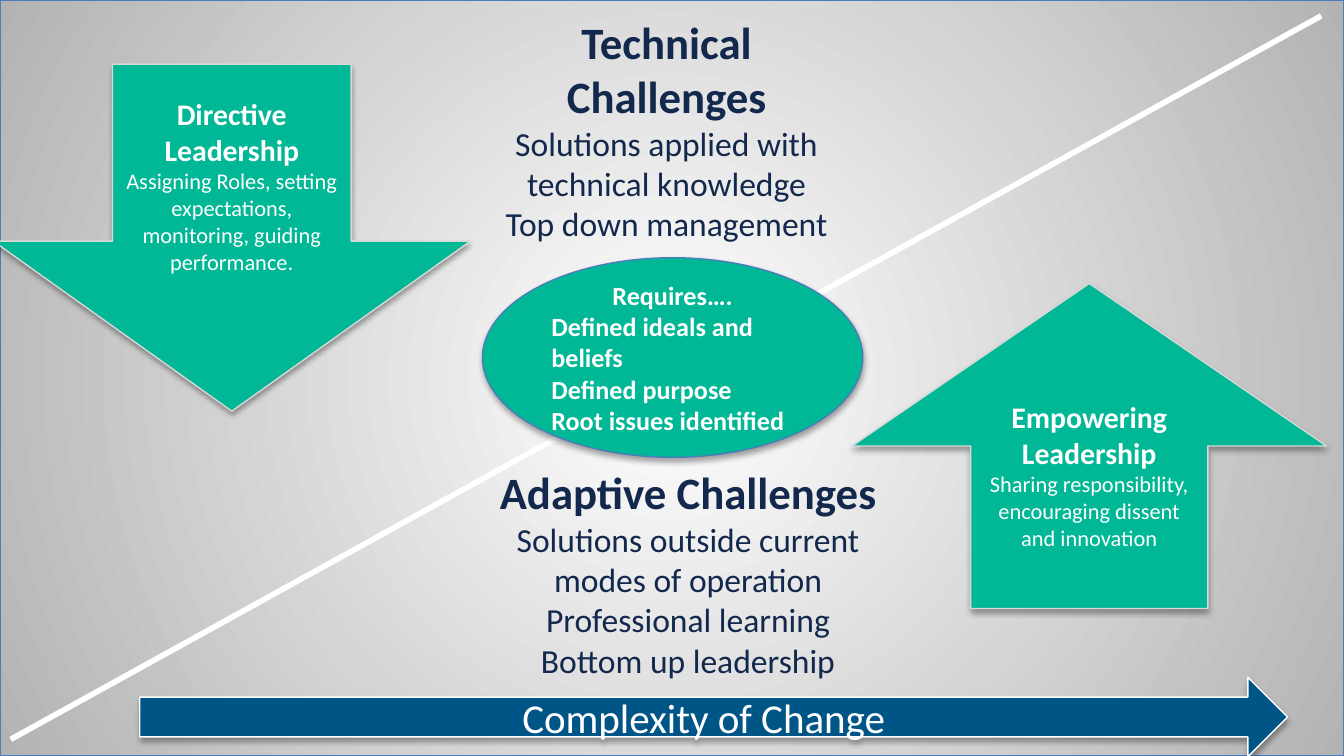
from dataclasses import dataclass

from lxml.etree import SubElement
from pptx import Presentation
from pptx.dml.color import RGBColor
from pptx.enum.shapes import MSO_CONNECTOR, MSO_SHAPE
from pptx.enum.text import MSO_ANCHOR, MSO_AUTO_SIZE, PP_ALIGN
from pptx.oxml import parse_xml
from pptx.oxml.ns import nsdecls, qn
from pptx.util import Inches, Pt

WIDTH, HEIGHT = Inches(10), Inches(5.625)
FONT = "Calibri"
WHITE = RGBColor(0xFF, 0xFF, 0xFF)
NAVY = RGBColor(0x12, 0x28, 0x4C)
GREEN = RGBColor(0x00, 0xB7, 0x96)
BLUE = RGBColor(0x00, 0x55, 0x87)
EDGE_BLUE = RGBColor(0x4A, 0x7D, 0xBA)
EDGE_GRAY = RGBColor(0xD9, 0xD9, 0xD9)
GLOW_GRAY = RGBColor(0xB3, 0xB3, 0xB3)


@dataclass(frozen=True)
class Area:
    left: float
    top: float
    width: float
    height: float

    def lengths(self) -> tuple:
        return (across(self.left), down(self.top),
                across(self.width), down(self.height))


@dataclass(frozen=True)
class Line:
    text: str
    size: float
    bold: bool = False
    align: PP_ALIGN = PP_ALIGN.CENTER


@dataclass(frozen=True)
class Figure:
    kind: MSO_SHAPE
    area: Area
    fill: RGBColor
    edge: RGBColor
    lines: tuple = ()
    adjustments: tuple = ()
    bottom_inset: float = 0.05


@dataclass(frozen=True)
class Challenge:
    area: Area
    heading: str
    points: tuple


def across(share: float) -> int:
    return round(WIDTH * share / 100)


def down(share: float) -> int:
    return round(HEIGHT * share / 100)


def add_line(frame, text: str, *, first: bool, size: float, color: RGBColor,
             bold: bool = False, align: PP_ALIGN = PP_ALIGN.CENTER) -> None:
    para = frame.paragraphs[0] if first else frame.add_paragraph()
    properties = para._p.get_or_add_pPr()
    properties.set("marL", "0")
    properties.set("indent", "0")
    SubElement(properties, qn("a:buNone"))
    para.alignment = align
    para.space_before = Pt(0)
    span = para.add_run()
    span.text = text
    span.font.name = FONT
    span.font.size = Pt(size)
    span.font.bold = bold
    span.font.color.rgb = color


def write_lines(frame, lines: tuple, color: RGBColor) -> None:
    frame.word_wrap = True
    for index, line in enumerate(lines):
        add_line(frame, line.text, first=index == 0, size=line.size,
                 color=color, bold=line.bold, align=line.align)


def add_shadow(shape) -> None:
    shape.shadow.inherit = False
    effects = shape._element.spPr.find(qn("a:effectLst"))
    effects.append(parse_xml(
        f'<a:outerShdw {nsdecls("a")} blurRad="{Pt(3.1)}" dist="{Pt(1.8)}" '
        'dir="5400000" rotWithShape="0"><a:srgbClr val="000000">'
        '<a:alpha val="35000"/></a:srgbClr></a:outerShdw>'))


def add_figure(page, figure: Figure):
    shape = page.shapes.add_shape(figure.kind, *figure.area.lengths())
    for index, value in enumerate(figure.adjustments):
        shape.adjustments[index] = value
    shape.fill.solid()
    shape.fill.fore_color.rgb = figure.fill
    shape.line.color.rgb = figure.edge
    shape.line.width = Pt(0.75)
    add_shadow(shape)
    frame = shape.text_frame
    frame.vertical_anchor = MSO_ANCHOR.MIDDLE
    frame.margin_bottom = Inches(figure.bottom_inset)
    write_lines(frame, figure.lines, WHITE)
    return shape


def add_backdrop(page) -> None:
    backdrop = add_figure(page, Figure(
        MSO_SHAPE.RECTANGLE, Area(0, 0, 100, 100), WHITE, EDGE_BLUE))
    properties = backdrop._element.spPr
    properties.replace(properties.find(qn("a:solidFill")), parse_xml(
        f'<a:gradFill {nsdecls("a")} rotWithShape="1"><a:gsLst>'
        f'<a:gs pos="0"><a:srgbClr val="{WHITE}"/></a:gs>'
        f'<a:gs pos="100000"><a:srgbClr val="{GLOW_GRAY}"/></a:gs></a:gsLst>'
        '<a:path path="circle"><a:fillToRect l="50000" t="50000" r="50000" '
        'b="50000"/></a:path></a:gradFill>'))


def fill_challenge(placeholder, challenge: Challenge) -> None:
    (placeholder.left, placeholder.top,
     placeholder.width, placeholder.height) = challenge.area.lengths()
    frame = placeholder.text_frame
    frame.auto_size = MSO_AUTO_SIZE.NONE
    frame.vertical_anchor = MSO_ANCHOR.TOP
    points = tuple(Line(point, 18) for point in challenge.points)
    write_lines(frame, (Line(challenge.heading, 24, bold=True), *points), NAVY)
    placeholder._element.getparent().append(placeholder._element)


def add_diagonal(page) -> None:
    diagonal = page.shapes.add_connector(
        MSO_CONNECTOR.STRAIGHT, across(98.3), down(2.1), across(0.8), down(97.8))
    diagonal.line.color.rgb = WHITE
    diagonal.line.width = Pt(3)
    SubElement(diagonal._element.spPr, qn("a:effectLst"))


LEADERSHIP = (
    Figure(MSO_SHAPE.UP_ARROW, Area(63.4, 37.5, 35.3, 43), GREEN, EDGE_GRAY,
           (Line("Empowering Leadership", 16, bold=True),
            Line("Sharing responsibility, encouraging dissent and innovation", 12)),
           (0.5, 0.5), bottom_inset=0.23),
    Figure(MSO_SHAPE.DOWN_ARROW, Area(-0.5, 8.5, 35.5, 45.9), GREEN, EDGE_GRAY,
           (Line("Directive Leadership", 16, bold=True),
            Line("Assigning Roles, setting expectations, monitoring, "
                 "guiding performance.", 12)),
           (0.5, 0.49), bottom_inset=0.2),
)
CHALLENGES = (
    Challenge(Area(36.5, 1.1, 26.2, 32.4), "Technical Challenges",
              ("Solutions applied with technical knowledge",
               "Top down management")),
    Challenge(Area(35.7, 60.6, 31, 30.9), "Adaptive Challenges",
              ("Solutions outside current modes of operation",
               "Professional learning", "Bottom up leadership")),
)
COMPLEXITY = Figure(
    MSO_SHAPE.RIGHT_ARROW, Area(10.4, 89.6, 85.4, 10.5), BLUE, WHITE,
    (Line("Complexity of Change", 22),), (0.5, 0.5))
REQUIREMENTS = Figure(
    MSO_SHAPE.OVAL, Area(35.9, 34.1, 28.3, 26.4), GREEN, EDGE_BLUE,
    (Line("Requires….", 14, bold=True),
     *(Line(text, 14, bold=True, align=PP_ALIGN.LEFT) for text in (
         "Defined ideals and beliefs", "Defined purpose",
         "Root issues identified"))))


def main() -> None:
    deck = Presentation()
    deck.slide_width, deck.slide_height = WIDTH, HEIGHT
    page = deck.slides.add_slide(deck.slide_layouts.get_by_name("Two Content"))
    title, *bodies = page.placeholders
    title._element.getparent().remove(title._element)
    add_backdrop(page)
    for arrow in LEADERSHIP:
        add_figure(page, arrow)
    for body, challenge in zip(bodies, CHALLENGES):
        fill_challenge(body, challenge)
    add_figure(page, COMPLEXITY)
    add_diagonal(page)
    add_figure(page, REQUIREMENTS)
    deck.save("out.pptx")


if __name__ == "__main__":
    main()
